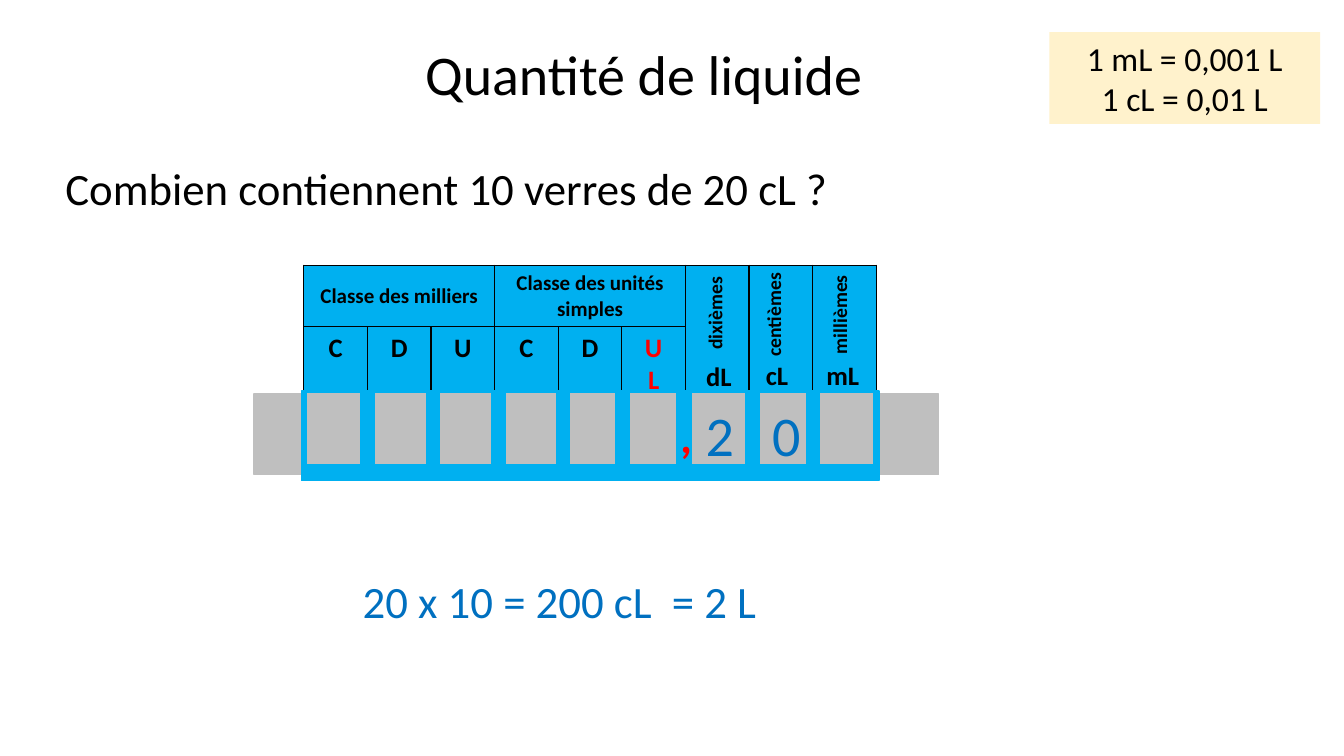
"""Build the slide on quantities of liquid with its place-value table."""
from lxml import etree
from pptx import Presentation
from pptx.dml.color import RGBColor
from pptx.enum import shapes, text
from pptx.oxml import ns
from pptx.util import Pt

BLACK, RED, BLUE, CYAN, GREY = "000000", "FF0000", "0070C0", "00B0F0", "BFBFBF"
CENTER, LEFT = text.PP_ALIGN.CENTER, text.PP_ALIGN.LEFT
TOP, MIDDLE = text.MSO_ANCHOR.TOP, text.MSO_ANCHOR.MIDDLE

TITLE = "Quantité de liquide"
QUESTION = "Combien contiennent 10 verres de 20 cL ?"
ANSWER = "20 x 10 = 200 cL  = 2 L"
REMINDERS = ["1 mL = 0,001 L", "1 cL = 0,01 L"]
CLASSES = ["Classe des milliers", "Classe des unités simples"]
RANKS = [["C"], ["D"], ["U"], ["C"], ["D"], ["U", "L"]]
DECIMALS = [
    ("dixièmes", (473, 211.5, 75.5, 24.5), "dL", (497, 253.5, 33, 30)),
    ("centièmes", (511, 212.5, 83.5, 24.5), "cL", (539.5, 253, 31, 30)),
    ("millièmes", (558, 212.5, 83.5, 24.5), "mL", (583, 253, 38, 30)),
]
DIGITS = [("2", 325.5), ("0", 373)]
TABLE_LEFT, TABLE_TOP, COLUMN_WIDTH = 217, 189.5, 45.45
ROW_HEIGHTS = [42.5, 53.5]
FRAME_TOP, BAR_HEIGHT = 279.4, 63.4
BARS = [(215.3, 3.6), (257.8, 9.4), (304.6, 9.4), (351.4, 9.4), (397.4, 9.4),
        (439.9, 9.4), (483.1, 7.2), (490.3, 3.6), (532.8, 9.4), (576, 9.4),
        (624.2, 3.6)]
FRAME_BASE = (215.3, 332, 412.5, 10.8)


def color(code):
    return RGBColor.from_string(code)


def write(frame, lines, size, ink=BLACK, bold=False, align=LEFT, anchor=TOP):
    frame.vertical_anchor = anchor
    for index, line in enumerate(lines):
        para = frame.paragraphs[0] if index == 0 else frame.add_paragraph()
        para.text = line
        para.alignment = align
        para.font.name = "Calibri"
        para.font.size = Pt(size)
        para.font.bold = bold
        para.font.color.rgb = color(ink)


def add_label(page, place, line, size, wrap=True, rotation=0, **style):
    box = page.shapes.add_textbox(*map(Pt, place))
    box.rotation = rotation
    box.text_frame.word_wrap = wrap
    write(box.text_frame, [line], size, **style)
    return box


def add_block(page, place, fill, outline=None):
    block = page.shapes.add_shape(shapes.MSO_SHAPE.RECTANGLE, *map(Pt, place))
    block.shadow.inherit = False
    block.fill.solid()
    block.fill.fore_color.rgb = color(fill)
    if outline:
        block.line.color.rgb = color(outline)
        block.line.width = Pt(1)
    else:
        block.line.fill.background()
    return block


def style_cell(cell):
    properties = cell._tc.get_or_add_tcPr()
    for side in ("a:lnL", "a:lnR", "a:lnT", "a:lnB"):
        line = etree.SubElement(properties, ns.qn(side), w=str(Pt(1)))
        fill = etree.SubElement(line, ns.qn("a:solidFill"))
        etree.SubElement(fill, ns.qn("a:srgbClr"), val=BLACK)
    cell.fill.solid()
    cell.fill.fore_color.rgb = color(CYAN)


def add_place_table(page):
    columns = len(RANKS) + len(DECIMALS)
    size = (columns * COLUMN_WIDTH, sum(ROW_HEIGHTS))
    table = page.shapes.add_table(
        2, columns, *map(Pt, (TABLE_LEFT, TABLE_TOP, *size))).table
    table.first_row = table.horz_banding = False
    for column in table.columns:
        column.width = Pt(COLUMN_WIDTH)
    for row, height in zip(table.rows, ROW_HEIGHTS):
        row.height = Pt(height)
    for cell in table.iter_cells():
        style_cell(cell)
    for index, name in enumerate(CLASSES):
        head = table.cell(0, 3 * index)
        head.merge(table.cell(0, 3 * index + 2))
        write(head.text_frame, [name], 15, bold=True, align=CENTER)
        head.vertical_anchor = MIDDLE
    for index, lines in enumerate(RANKS):
        ink = RED if "L" in lines else BLACK
        write(table.cell(1, index).text_frame, lines, 19, ink, True, CENTER)
    for index in range(len(RANKS), columns):
        table.cell(0, index).merge(table.cell(1, index))


def add_number_band(page):
    band = add_block(page, (181.5, 281.5, 489, 57.6), GREY, GREY)
    line = "".join("\t" + digit for digit, stop in DIGITS)
    write(band.text_frame, [line], 40, BLUE, anchor=MIDDLE)
    properties = band.text_frame.paragraphs[0]._p.get_or_add_pPr()
    stops = etree.SubElement(properties, ns.qn("a:tabLst"))
    properties.remove(stops)
    properties.insert(0, stops)
    for digit, stop in DIGITS:
        etree.SubElement(stops, ns.qn("a:tab"), pos=str(Pt(stop)), algn="ctr")


def main():
    deck = Presentation()
    deck.slide_width, deck.slide_height = Pt(960), Pt(540)
    page = deck.slides.add_slide(deck.slide_layouts[5])

    title = page.shapes.title
    title.left, title.top, title.width, title.height = map(Pt, (144, 24, 631.5, 63))
    title.text_frame.auto_size = text.MSO_AUTO_SIZE.NONE
    write(title.text_frame, [TITLE], 40, align=CENTER, anchor=MIDDLE)
    title.text_frame.paragraphs[0].line_spacing = 0.9

    question = add_block(page, (39.6, 111, 615.5, 46), "FFFFFF")
    write(question.text_frame, [QUESTION], 32)
    add_place_table(page)
    for name, name_place, unit, unit_place in DECIMALS:
        add_label(page, name_place, name, 14, rotation=270, bold=True, align=CENTER)
        add_label(page, unit_place, unit, 19, wrap=False, bold=True, align=CENTER)
    reminder = add_block(page, (749.5, 23, 193.5, 65.5), "FFF2CC")
    write(reminder.text_frame, REMINDERS, 24, align=CENTER, anchor=MIDDLE)

    add_number_band(page)
    for left, width in BARS:
        add_block(page, (left, FRAME_TOP, width, BAR_HEIGHT), CYAN, CYAN)
    add_block(page, FRAME_BASE, CYAN, CYAN)
    comma = add_label(page, (486, 288.7, 12, 50), ",", 32, wrap=False,
                      ink=RED, bold=True)
    comma.text_frame.margin_left = comma.text_frame.margin_right = 0
    add_label(page, (252, 406, 312.5, 46), ANSWER, 32, ink=BLUE)
    deck.save("out.pptx")


if __name__ == "__main__":
    main()
